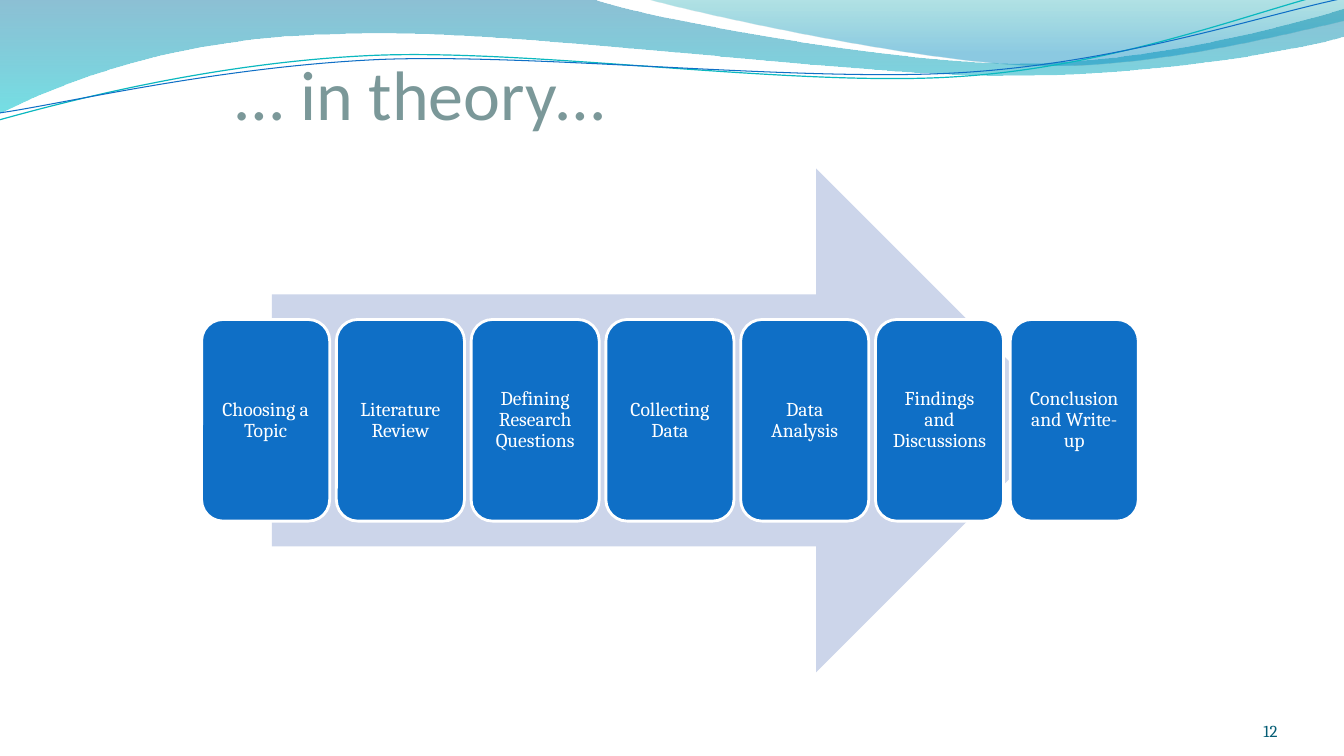
from dataclasses import dataclass

from lxml import etree
from pptx import Presentation
from pptx.dml.color import RGBColor
from pptx.enum.shapes import MSO_SHAPE
from pptx.enum.text import MSO_ANCHOR, PP_ALIGN
from pptx.oxml.ns import qn
from pptx.util import Inches, Pt

ARROW = MSO_SHAPE.RIGHT_ARROW
ROUNDED = MSO_SHAPE.ROUNDED_RECTANGLE
BOTTOM, MIDDLE = MSO_ANCHOR.BOTTOM, MSO_ANCHOR.MIDDLE
LEFT, CENTER, RIGHT = PP_ALIGN.LEFT, PP_ALIGN.CENTER, PP_ALIGN.RIGHT


@dataclass(frozen=True)
class Theme:
    heading_font: str = "Calibri"
    body_font: str = "Cambria"
    title_size: int = 50
    step_size: int = 14
    number_size: int = 12
    title: str = "7B9899"
    number: str = "045D75"
    arrow: str = "CCD5EA"
    step: str = "0F6FC6"
    white: str = "FFFFFF"
    teal_line: str = "0AB8BF"
    # Gradient stops: position, colour, opacity in percent
    back_wave: tuple = ((0, "0074A1", 45), (1, "00C6CF", 55))
    front_wave: tuple = ((0, "00A1A9", 30), (0.8, "008BBF", 45))


THEME = Theme()
STEPS = ["Choosing a Topic", "Literature Review", "Defining Research Questions",
         "Collecting Data", "Data Analysis", "Findings and Discussions",
         "Conclusion and Write-up"]

# Outlines in inches: a pair is a straight segment's end,
# six numbers are two Bezier control points and the curve's end.
BACK_WAVE = [(0, 0), (5.87, -0.01), (6.34, 0.17, 8.85, 0.63, 10.11, 0.63),
             (11.38, 0.63, 12.78, 0.26, 13.33, 0.09), (13.35, 0.36),
             (13.11, 0.44, 11.6, 0.76, 9.94, 0.75),
             (8.29, 0.75, 5.09, 0.28, 3.43, 0.34),
             (1.72, 0.36, 0.61, 0.83, -0.01, 1.13)]
FRONT_WAVE = [(6.39, -0.01), (6.79, 0.11, 9.09, 0.62, 10.25, 0.65),
              (11.41, 0.69, 12.82, 0.32, 13.33, 0.21), (13.33, 0)]
TEAL_CURVE = [(-0.01, 1.19), (0.64, 1.01, 2.11, 0.62, 3.69, 0.55),
              (5.27, 0.48, 7.9, 0.87, 9.5, 0.76),
              (11.1, 0.66, 12.52, 0.08, 13.31, -0.1)]
BLUE_CURVE = [(0, 1.12), (0.63, 1.03, 2.18, 0.66, 3.78, 0.59),
              (5.37, 0.53, 7.96, 0.82, 9.55, 0.72),
              (11.15, 0.62, 12.55, 0.14, 13.34, -0.02)]


def rgb(code):
    return RGBColor.from_string(code)


def bend(shape, left, top, outline):
    """Turn the straight segments that carry control points into curves."""
    segments = list(shape._element.iter(qn("a:lnTo")))
    for segment, numbers in zip(segments, outline[1:]):
        if len(numbers) == 2:
            continue
        curve = etree.Element(qn("a:cubicBezTo"))
        for x, y in zip(numbers[::2], numbers[1::2]):
            point = etree.SubElement(curve, qn("a:pt"))
            point.set("x", str(left + Inches(x) - shape.left))
            point.set("y", str(top + Inches(y) - shape.top))
        segment.getparent().replace(segment, curve)


def add_outline(slide, left, top, outline, close):
    ends = [(left + Inches(part[-2]), top + Inches(part[-1])) for part in outline]
    builder = slide.shapes.build_freeform(*ends[0])
    builder.add_line_segments(ends[1:], close=close)
    shape = builder.convert_to_shape()
    shape.shadow.inherit = False
    bend(shape, left, top, outline)
    return shape


def add_wave(slide, left, top, outline, stops):
    wave = add_outline(slide, left, top, outline, close=True)
    wave.line.fill.background()
    wave.fill.gradient()
    wave.fill.gradient_angle = 270
    for stop, (position, color, _) in zip(wave.fill.gradient_stops, stops):
        stop.position = position
        stop.color.rgb = rgb(color)
    # Opacity of each stop
    for color, (_, _, opacity) in zip(wave._element.iter(qn("a:srgbClr")), stops):
        etree.SubElement(color, qn("a:alpha")).set("val", str(opacity * 1000))


def add_curve(slide, left, top, outline, color, width):
    curve = add_outline(slide, left, top, outline, close=False)
    curve.fill.background()
    curve.line.color.rgb = rgb(color)
    curve.line.width = Pt(width)


def add_header_waves(slide, left, top):
    add_wave(slide, left, top, BACK_WAVE, THEME.back_wave)
    add_wave(slide, left, top, FRONT_WAVE, THEME.front_wave)
    add_curve(slide, left, top, TEAL_CURVE, THEME.teal_line, 0.85)
    add_curve(slide, left, top, BLUE_CURVE, THEME.step, 0.75)


def write(shape, text, font, size, color, align, anchor, insets):
    frame = shape.text_frame
    frame.word_wrap = True
    frame.vertical_anchor = anchor
    (frame.margin_left, frame.margin_top,
     frame.margin_right, frame.margin_bottom) = map(Inches, insets)
    paragraph = frame.paragraphs[0]
    paragraph.text = text
    paragraph.alignment = align
    paragraph.font.name = font
    paragraph.font.size = Pt(size)
    paragraph.font.color.rgb = rgb(color)
    return paragraph


def add_title(slide, left, top, width, height):
    title = slide.shapes.add_textbox(left, top, width, height)
    write(title, "… in theory…", THEME.heading_font, THEME.title_size,
          THEME.title, LEFT, BOTTOM, (0, 0.05, 0, 0))


def add_page_number(slide, left, top, width, height):
    number = slide.shapes.add_textbox(left, top, width, height)
    write(number, "12", THEME.body_font, THEME.number_size,
          THEME.number, RIGHT, BOTTOM, (0, 0, 0, 0))


def add_block(slide, kind, left, top, width, height, color):
    block = slide.shapes.add_shape(kind, left, top, width, height)
    block.shadow.inherit = False
    block.fill.solid()
    block.fill.fore_color.rgb = rgb(color)
    block.line.fill.background()
    return block


def add_process(slide, left, top, width, height):
    # Arrow behind the steps, centred across 85% of the width
    arrow_width = int(width * 0.85)
    add_block(slide, ARROW, left + (width - arrow_width) // 2, top,
              arrow_width, height, THEME.arrow)

    # Equal steps along the arrow's middle
    step_width, step_height = Inches(1.27), int(height * 0.4)
    pitch = (width - step_width) / (len(STEPS) - 1)
    step_top = top + (height - step_height) // 2
    for i, label in enumerate(STEPS):
        step = add_block(slide, ROUNDED, left + int(i * pitch), step_top,
                         step_width, step_height, THEME.step)
        step.line.color.rgb = rgb(THEME.white)
        step.line.width = Pt(2)
        paragraph = write(step, label, THEME.body_font, THEME.step_size,
                          THEME.white, CENTER, MIDDLE, (0.06,) * 4)
        paragraph.line_spacing = 0.9


def main():
    deck = Presentation()
    deck.slide_width, deck.slide_height = Inches(13.33), Inches(7.5)
    slide = deck.slides.add_slide(deck.slide_layouts[6])
    add_header_waves(slide, Inches(0), Inches(0))
    add_title(slide, Inches(2.34), Inches(0.25), Inches(8.92), Inches(1.08))
    add_page_number(slide, Inches(11.56), Inches(6.95), Inches(1.11), Inches(0.4))
    add_process(slide, Inches(2), Inches(1.67), Inches(9.29), Inches(5))
    deck.save("out.pptx")


if __name__ == "__main__":
    main()
